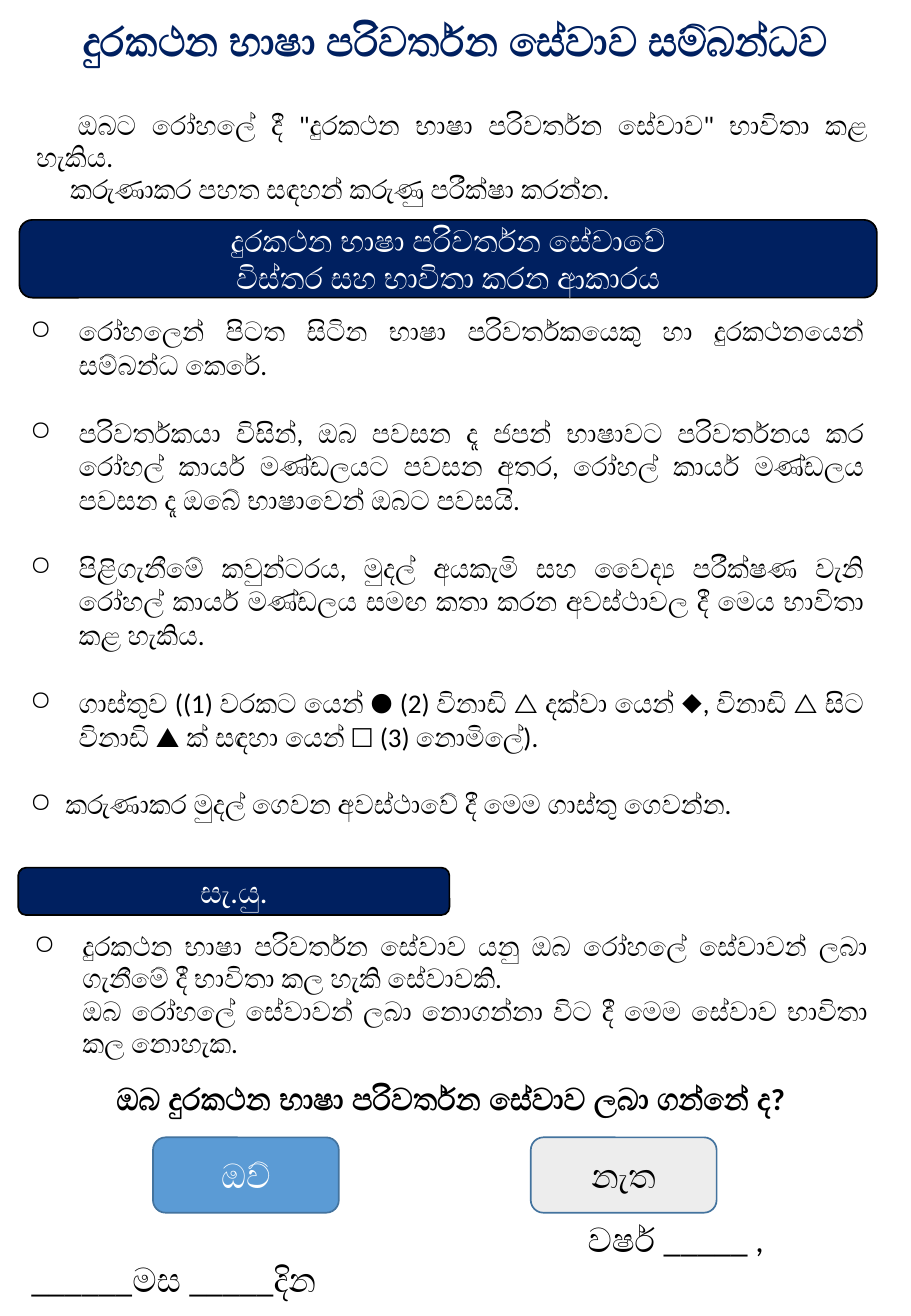
import collections

import lxml.etree
import pptx
import pptx.dml.color
import pptx.enum.shapes
import pptx.enum.text
import pptx.oxml.ns
import pptx.util

Pt = pptx.util.Pt
RGBColor = pptx.dml.color.RGBColor
Align = pptx.enum.text.PP_ALIGN
Anchor = pptx.enum.text.MSO_ANCHOR
Box = collections.namedtuple("Box", "left top width height")

GRID = pptx.util.Inches(0.1)
PAGE_COLUMNS = 75
PAGE_ROWS = 108.3

NAVY = RGBColor(0x00, 0x20, 0x60)
BLACK = RGBColor(0x00, 0x00, 0x00)
WHITE = RGBColor(0xFF, 0xFF, 0xFF)
BLUE = RGBColor(0x5B, 0x9B, 0xD5)
BLUE_EDGE = RGBColor(0x43, 0x73, 0x9E)
GREY = RGBColor(0xED, 0xED, 0xED)

TITLE = {"name": "Calibri", "size": Pt(24), "bold": True}
BODY = {"name": "Calibri", "size": Pt(16)}
BANNER = {"name": "Calibri", "size": Pt(18)}
QUESTION = {"name": "Calibri", "size": Pt(18), "bold": True}
FORM = {"name": "Calibri", "size": Pt(20)}

JOINER = chr(0x200D)
INTRODUCTION = [
    ('ඔබට රෝහලේ දී "දුරකථන භාෂා පරිවර්තන සේවාව" භාවිතා කළ හැකිය.', 3.4),
    ("කරුණාකර පහත සඳහන් කරුණු පරීක්ෂා කරන්න.", 2.8),
]
SERVICE_DETAILS = [
    ("රෝහලෙන් පිටත සිටින භාෂා පරිවර්තකයෙකු හා දුරකථනයෙන් සම්බන්ධ කෙරේ.", 4),
    ("පරිවර්තකයා විසින්, ඔබ පවසන දෑ ජපන් භාෂාවට පරිවර්තනය කර රෝහල් කාර්ය මණ්ඩලයට "
     "පවසන අතර, රෝහල් කාර්ය මණ්ඩලය පවසන දෑ ඔබේ භාෂාවෙන් ඔබට පවසයි.", 4),
    (f"පිළිගැනීමේ කවුන්ටරය, මුදල් අයකැමි සහ වෛද්{JOINER}ය පරීක්ෂණ වැනි රෝහල් කාර්ය "
     "මණ්ඩලය සමඟ කතා කරන අවස්ථාවල දී මෙය භාවිතා කළ හැකිය.", 4),
    ("ගාස්තුව ((1) වරකට යෙන් ● (2) විනාඩි △ දක්වා යෙන් ◆, විනාඩි △ සිට විනාඩි ▲ ක් "
     "සඳහා යෙන් □ (3) නොමිලේ).", 4),
    ("කරුණාකර මුදල් ගෙවන අවස්ථාවේ දී මෙම ගාස්තු ගෙවන්න.", 2.9),
]
NOTE = ("දුරකථන භාෂා පරිවර්තන සේවාව යනු ඔබ රෝහලේ සේවාවන් ලබා ගැනීමේ දී භාවිතා කල "
        "හැකි සේවාවකි.")
NOTE_LIMIT = "ඔබ රෝහලේ සේවාවන් ලබා නොගන්නා විට දී මෙම සේවාව භාවිතා කල නොහැක."


def grid(count):
    return round(count * GRID)


def add_text_box(page, box):
    frame = page.shapes.add_textbox(*map(grid, box)).text_frame
    frame.word_wrap = True
    return frame


def write(frame, text, style, color=BLACK, align=Align.CENTER,
          margin=0, indent=0, bullet=False, layout=None):
    first = frame.paragraphs[0]
    para = first if not first.runs else frame.add_paragraph()
    properties = para._p.get_or_add_pPr()
    properties.set("marL", str(grid(margin)))
    properties.set("indent", str(grid(indent)))
    if bullet:
        mark = lxml.etree.SubElement(properties, pptx.oxml.ns.qn("a:buChar"))
        mark.set("char", "○")
    para.alignment = align
    for name, value in (layout or {}).items():
        setattr(para, name, value)
    span = para.add_run()
    span.text = text
    for name, value in style.items():
        setattr(span.font, name, value)
    span.font.color.rgb = color


def add_panel(page, box, lines, style, fill, edge, color):
    kind = pptx.enum.shapes.MSO_SHAPE.ROUNDED_RECTANGLE
    panel = page.shapes.add_shape(kind, *map(grid, box))
    panel.shadow.inherit = False
    panel.fill.solid()
    panel.fill.fore_color.rgb = fill
    panel.line.color.rgb = edge
    panel.line.width = Pt(1)
    panel.text_frame.vertical_anchor = Anchor.MIDDLE
    for line in lines:
        write(panel.text_frame, line, style, color)


def add_banner(page, box, *lines):
    add_panel(page, box, lines, BANNER, NAVY, BLACK, WHITE)


def add_heading(page, box, text, style, color):
    write(add_text_box(page, box), text, style, color)


def add_introduction(page, box):
    frame = add_text_box(page, box)
    for text, indent in INTRODUCTION:
        write(frame, text, BODY, align=Align.JUSTIFY, indent=indent)


def add_service_details(page, box):
    frame = add_text_box(page, box)
    layout = {"line_spacing": Pt(20), "space_after": Pt(20)}
    for text, margin in SERVICE_DETAILS:
        write(frame, text, BODY, align=Align.JUSTIFY, margin=margin,
              indent=-margin, bullet=True, layout=layout)


def add_note(page, box):
    frame = add_text_box(page, box)
    write(frame, NOTE, BODY, align=Align.JUSTIFY, margin=4, indent=-4, bullet=True)
    write(frame, NOTE_LIMIT, BODY, align=Align.JUSTIFY, margin=4)


def add_answers(page, box):
    button_width = 15.3
    answers = [("ඔව්", BLUE, WHITE), ("නැත", GREY, BLACK)]
    step = (box.width - button_width) / (len(answers) - 1)
    for index, (text, fill, color) in enumerate(answers):
        button = Box(box.left + index * step, box.top, button_width, box.height)
        add_panel(page, button, [text], FORM, fill, BLUE_EDGE, color)


def add_date_line(page, box):
    write(add_text_box(page, box), "වර්ෂ _____ , ______මස _____දින", FORM,
          align=Align.LEFT, indent=45.8)


def main():
    deck = pptx.Presentation()
    deck.slide_width = grid(PAGE_COLUMNS)
    deck.slide_height = grid(PAGE_ROWS)
    page = deck.slides.add_slide(deck.slide_layouts[6])
    add_heading(page, Box(0, 0.8, PAGE_COLUMNS, 5.1),
                "දුරකථන භාෂා පරිවර්තන සේවාව සම්බන්ධව", TITLE, NAVY)
    add_introduction(page, Box(2, 8.4, 70.4, 9.1))
    add_banner(page, Box(1.6, 18.1, 70.6, 6.4),
               "දුරකථන භාෂා පරිවර්තන සේවාවේ", "විස්තර සහ භාවිතා කරන ආකාරය")
    add_service_details(page, Box(1.5, 25.3, 70.6, 45.9))
    add_banner(page, Box(1.5, 71.4, 35.5, 3.9), "සැ.යු.")
    add_note(page, Box(1.8, 76, 70.6, 11.8))
    add_heading(page, Box(-0.4, 88.4, PAGE_COLUMNS, 4),
                "ඔබ දුරකථන භාෂා පරිවර්තන සේවාව ලබා ගන්නේ ද?", QUESTION, BLACK)
    add_answers(page, Box(12.6, 93.6, 46.4, 6.2))
    add_date_line(page, Box(1.6, 99.8, 71.7, 8.5))
    deck.save("out.pptx")


if __name__ == "__main__":
    main()
